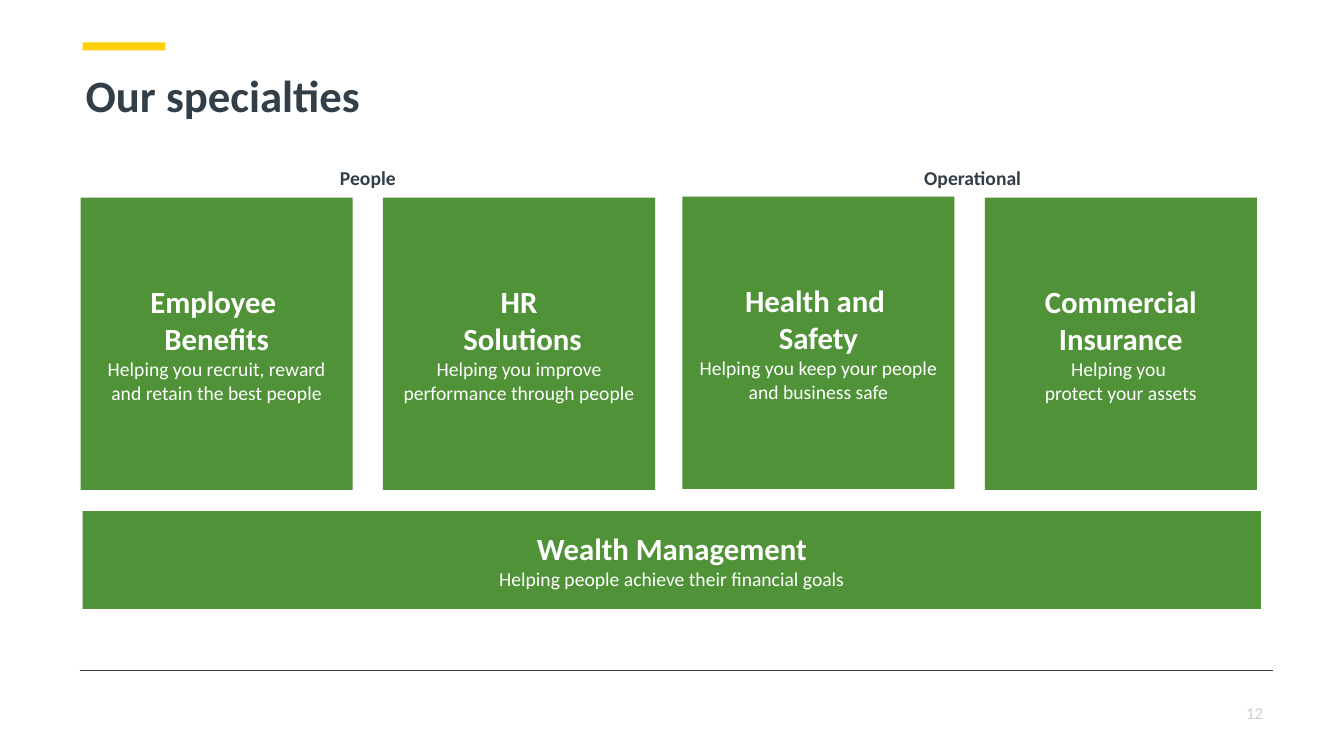
from copy import deepcopy
from dataclasses import dataclass

from pptx import Presentation
from pptx.dml.color import RGBColor
from pptx.enum.shapes import MSO_CONNECTOR as Connector, MSO_SHAPE as Shape
from pptx.enum.text import MSO_ANCHOR as Anchor, MSO_AUTO_SIZE as AutoSize, PP_ALIGN as Align
from pptx.oxml.ns import qn
from pptx.oxml.xmlchemy import OxmlElement
from pptx.util import Pt

GREEN, YELLOW, SLATE, WHITE, GREY = "4F9237", "FFCF08", "323E48", "FFFFFF", "D0CECE"


@dataclass(frozen=True)
class Box:
    left: float
    top: float
    width: float
    height: float

    def lengths(self) -> tuple:
        return Pt(self.left), Pt(self.top), Pt(self.width), Pt(self.height)


@dataclass(frozen=True)
class TextStyle:
    size: float
    color: str
    bold: bool = False
    align: Align = Align.CENTER
    line_spacing: float | None = None


@dataclass(frozen=True)
class Specialty:
    box: Box
    name: str
    benefit: str


@dataclass(frozen=True)
class Label:
    box: Box
    text: str
    style: TextStyle
    anchor: Anchor = Anchor.TOP


NAME = TextStyle(22, WHITE, bold=True)
BENEFIT = TextStyle(14, WHITE)
GROUP = TextStyle(14, SLATE, bold=True, line_spacing=0.9)
TITLE = TextStyle(32, SLATE, bold=True, align=Align.LEFT, line_spacing=0.9)
NUMBER = TextStyle(12, GREY, align=Align.RIGHT)

CARD_WIDTH, CARD_HEIGHT, CARD_STEP = 194.4, 208.8, 216
PEOPLE_LEFT, OPERATIONAL_LEFT, CARD_TOP = 57.6, 487.44, 141.12


def card(left: float, name: str, benefit: str, top: float = CARD_TOP) -> Specialty:
    return Specialty(Box(left, top, CARD_WIDTH, CARD_HEIGHT), name, benefit)


SPECIALTIES = [
    card(PEOPLE_LEFT, "Employee \nBenefits",
         "Helping you recruit, reward and retain the best people"),
    card(PEOPLE_LEFT + CARD_STEP, "HR\n Solutions",
         "Helping you improve performance through people"),
    card(OPERATIONAL_LEFT, "Health and \nSafety",
         "Helping you keep your people and business safe", top=140.4),
    card(OPERATIONAL_LEFT + CARD_STEP, "Commercial Insurance",
         "Helping you \nprotect your assets"),
    Specialty(Box(59.04, 365.04, 841.68, 69.84), "Wealth Management",
              "Helping people achieve their financial goals"),
]

LABELS = [
    Label(Box(57.6, 116.64, 410.4, 23.76), "People", GROUP),
    Label(Box(491.76, 116.64, 406.08, 23.76), "Operational", GROUP),
    Label(Box(693.36, 494.64, 216, 28.8), "12", NUMBER, Anchor.MIDDLE),
]


def rgb(color: str) -> RGBColor:
    return RGBColor.from_string(color)


def write_paragraph(paragraph, text: str, style: TextStyle) -> None:
    """Fill a paragraph; line breaks take the size of the text around them."""
    paragraph.text = text
    paragraph.alignment = style.align
    if style.line_spacing:
        paragraph.line_spacing = style.line_spacing
    for run in paragraph.runs:
        for name, value in {"name": "Calibri", "size": Pt(style.size), "bold": style.bold}.items():
            setattr(run.font, name, value)
        run.font.color.rgb = rgb(style.color)
    properties = paragraph.runs[0].font._element
    for line_break in paragraph._p.findall(qn("a:br")):
        line_break.append(deepcopy(properties))


def format_frame(frame, anchor: Anchor) -> None:
    settings = {"word_wrap": True, "auto_size": AutoSize.NONE, "vertical_anchor": anchor}
    for name, value in settings.items():
        setattr(frame, name, value)


def add_rectangle(slide, box: Box, color: str):
    shape = slide.shapes.add_shape(Shape.RECTANGLE, *box.lengths())
    shape.shadow.inherit = False
    shape.fill.solid()
    shape.fill.fore_color.rgb = rgb(color)
    shape.line.fill.background()
    return shape


def add_specialty(slide, specialty: Specialty) -> None:
    frame = add_rectangle(slide, specialty.box, GREEN).text_frame
    format_frame(frame, Anchor.MIDDLE)
    write_paragraph(frame.paragraphs[0], specialty.name, NAME)
    write_paragraph(frame.add_paragraph(), specialty.benefit, BENEFIT)


def add_label(slide, label: Label) -> None:
    frame = slide.shapes.add_textbox(*label.box.lengths()).text_frame
    format_frame(frame, label.anchor)
    write_paragraph(frame.paragraphs[0], label.text, label.style)


def add_title(slide, text: str) -> None:
    title = slide.shapes.title
    title.left, title.top, title.width, title.height = Box(54, 48.96, 852.48, 57.6).lengths()
    format_frame(title.text_frame, Anchor.TOP)
    write_paragraph(title.text_frame.paragraphs[0], text, TITLE)


def add_footer_line(slide) -> None:
    line = slide.shapes.add_connector(
        Connector.STRAIGHT, Pt(56.88), Pt(478.8), Pt(909.36), Pt(478.8))
    line.line.color.rgb = rgb(SLATE)
    line.line.width = Pt(0.5)
    line._element.spPr.append(OxmlElement("a:effectLst"))


def main() -> None:
    presentation = Presentation()
    presentation.slide_width, presentation.slide_height = Pt(960), Pt(540)
    slide = presentation.slides.add_slide(presentation.slide_layouts[5])
    add_title(slide, "Our specialties")
    add_footer_line(slide)
    add_rectangle(slide, Box(59.04, 30.24, 59.04, 5.76), YELLOW)
    for specialty in SPECIALTIES:
        add_specialty(slide, specialty)
    for label in LABELS:
        add_label(slide, label)
    presentation.save("out.pptx")


if __name__ == "__main__":
    main()
